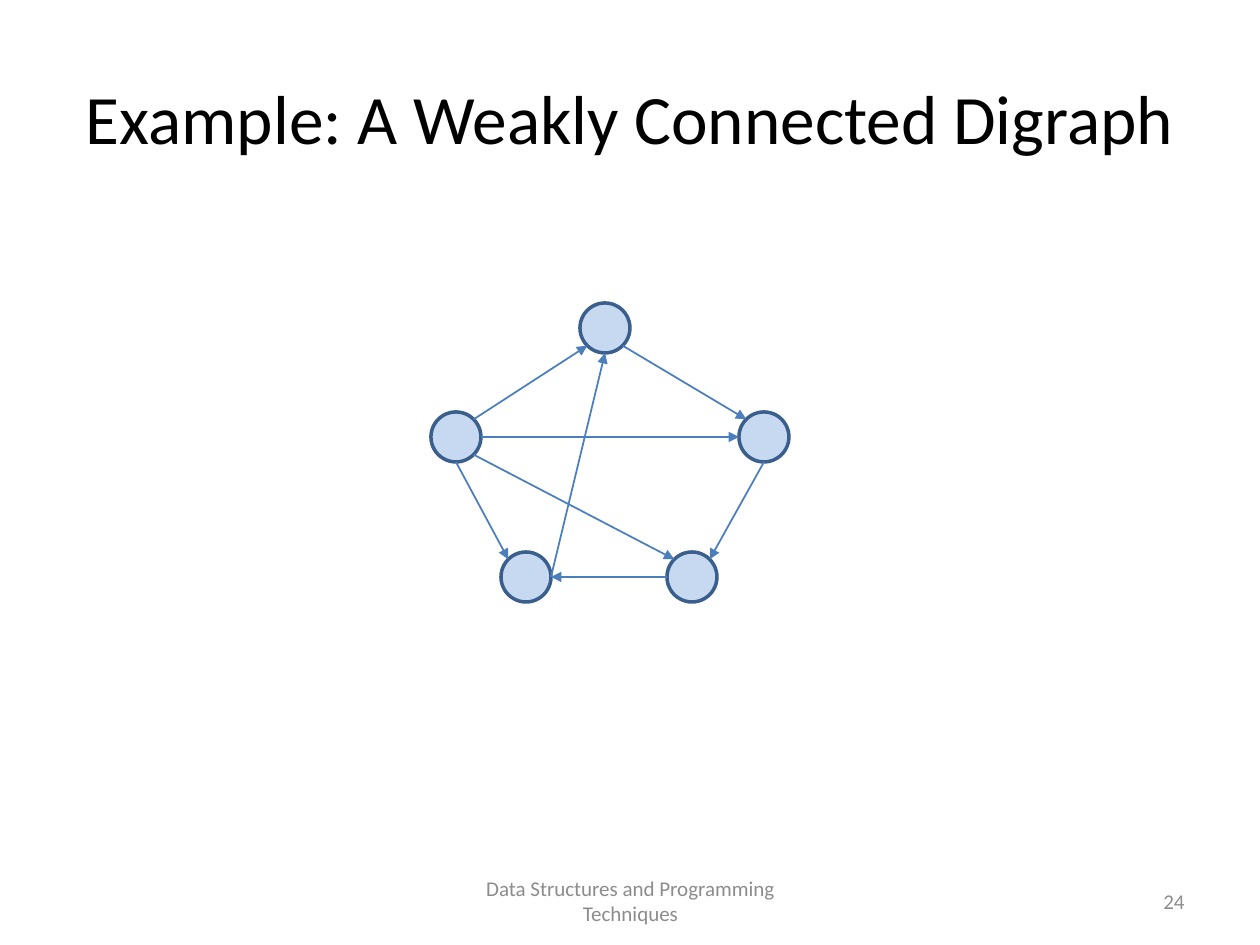
from math import cos, radians, sin

from lxml import etree
from pptx import Presentation
from pptx.dml.color import RGBColor
from pptx.enum.shapes import MSO_CONNECTOR, MSO_SHAPE
from pptx.enum.text import MSO_ANCHOR, PP_ALIGN
from pptx.oxml.ns import qn
from pptx.util import Pt

OVAL = MSO_SHAPE.OVAL
LINE = MSO_CONNECTOR.STRAIGHT
MIDDLE = MSO_ANCHOR.MIDDLE
CENTER, RIGHT = PP_ALIGN.CENTER, PP_ALIGN.RIGHT
SCALE = 914400 / 126
SIZE = 50


def px(n):
    return round(n * SCALE)


def color(code):
    return RGBColor.from_string(code)


deck = Presentation()
deck.slide_width, deck.slide_height = px(1260), px(945)
slide = deck.slides.add_slide(deck.slide_layouts[6])
shapes = slide.shapes

texts = [
    ("Example: A Weakly Connected Digraph", 63, 38, 1134, 158, 39.6, "000000", CENTER),
    ("Data Structures and Programming Techniques", 431, 876, 399, 50, 12, "8C8C8C", CENTER),
    ("24", 903, 876, 294, 50, 12, "8C8C8C", RIGHT),
]
for words, x, y, w, h, size, ink, align in texts:
    frame = shapes.add_textbox(px(x), px(y), px(w), px(h)).text_frame
    frame.word_wrap = True
    frame.vertical_anchor = MIDDLE
    para = frame.paragraphs[0]
    para.alignment = align
    run = para.add_run()
    run.text = words
    run.font.name = "Calibri"
    run.font.size = Pt(size)
    run.font.color.rgb = color(ink)

nodes = {
    "top": (605, 328),
    "left": (456, 437),
    "right": (764, 437),
    "low right": (692, 577),
    "low left": (526, 577),
}
for x, y in nodes.values():
    node = shapes.add_shape(OVAL, px(x - SIZE / 2), px(y - SIZE / 2), px(SIZE), px(SIZE))
    node.shadow.inherit = False
    node.fill.solid()
    node.fill.fore_color.rgb = color("C6D9F1")
    node.line.color.rgb = color("3A5F8C")
    node.line.width = Pt(2)

edges = [
    ("left", 315, "top", 135),
    ("top", 45, "right", 225),
    ("left", 0, "right", 180),
    ("left", 90, "low left", 225),
    ("low left", 0, "top", 90),
    ("right", 90, "low right", 315),
    ("low right", 180, "low left", 0),
    ("left", 45, "low right", 225),
]
for start, leave, end, enter in edges:
    ends = []
    for name, angle in ((start, leave), (end, enter)):
        x, y = nodes[name]
        turn = radians(angle)
        ends += [px(x + SIZE / 2 * cos(turn)), px(y + SIZE / 2 * sin(turn))]
    edge = shapes.add_connector(LINE, *ends)
    edge.line.color.rgb = color("4B7EBC")
    edge.line.width = Pt(1)
    etree.SubElement(edge.line._get_or_add_ln(), qn("a:tailEnd"), type="triangle")
    etree.SubElement(edge._element.spPr, qn("a:effectLst"))

deck.save("out.pptx")
